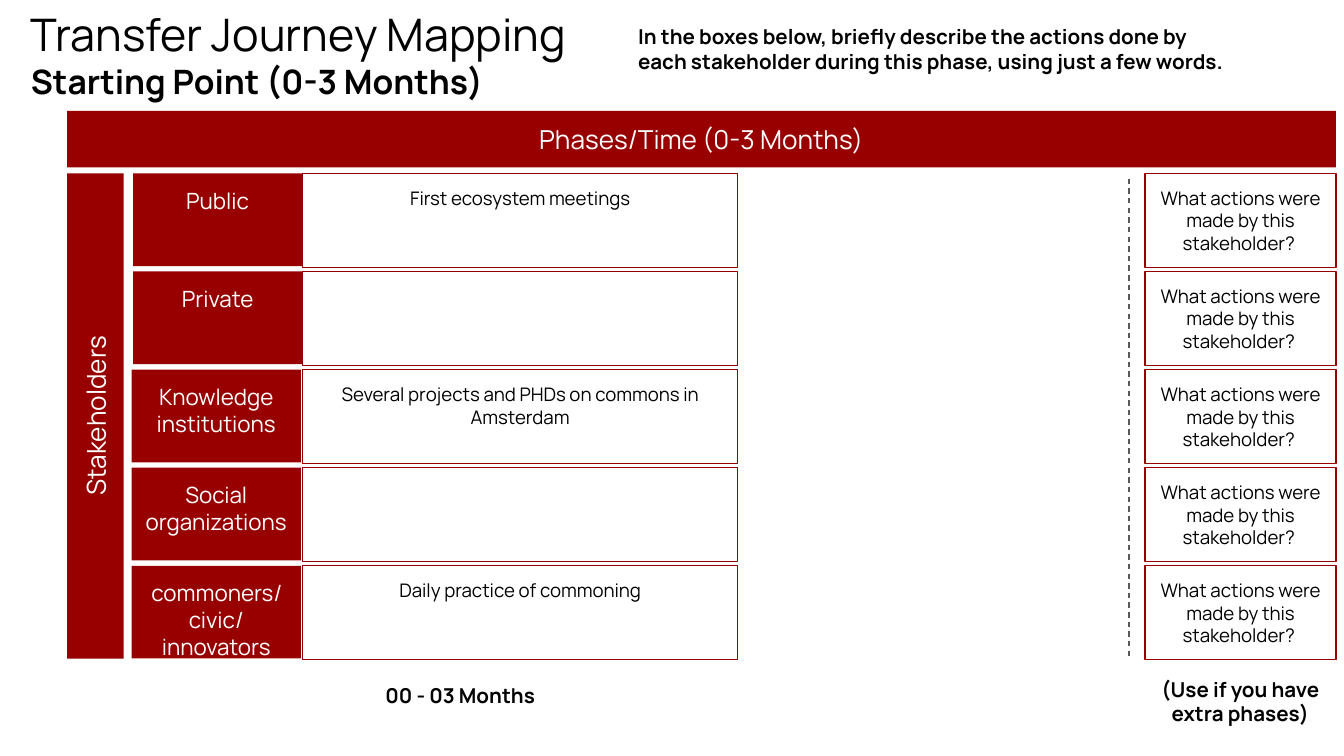
import pptx
import pptx.util
import pptx.dml.color
import pptx.enum.dml
import pptx.enum.shapes
import pptx.enum.text
import pptx.oxml.ns
import lxml.etree

RED, BLACK, WHITE, GREY = "980000", "000000", "FFFFFF", "595959"
FONT = "Manrope"
STEP = 146  # distance from one row to the next
ROWS = [
    (["Public"], "First ecosystem meetings"),
    (["Private"], ""),
    (["Knowledge institutions"],
     "Several projects and PHDs on commons in Amsterdam"),
    (["Social organizations"], ""),
    (["commoners/civic/", "innovators"], "Daily practice of commoning"),
]
ASK = "What actions were made by this stakeholder? "
ALIGN = pptx.enum.text.PP_ALIGN
ANCHOR = pptx.enum.text.MSO_ANCHOR


def px(n):
    """200 px to the inch."""
    return pptx.util.Emu(n * 4572)


def color(code):
    return pptx.dml.color.RGBColor.from_string(code)


def write(shape, lines, tone=BLACK, align=ALIGN.CENTER, anchor=ANCHOR.TOP):
    """Each line is (text, size, bold)."""
    frame = shape.text_frame
    frame.word_wrap = True
    frame.auto_size = pptx.enum.text.MSO_AUTO_SIZE.NONE
    frame.vertical_anchor = anchor
    frame.margin_left = frame.margin_right = px(20)
    frame.margin_top = frame.margin_bottom = px(20)
    for i, (text, size, bold) in enumerate(lines):
        para = frame.add_paragraph() if i else frame.paragraphs[0]
        para.alignment = align
        run = para.add_run()
        run.text = text
        font = run.font
        font.name, font.size, font.bold = FONT, pptx.util.Pt(size), bold
        font.color.rgb = color(tone)


def rect(slide, box, fill=None):
    """Solid red block, or a hollow one with a red outline."""
    shape = slide.shapes.add_shape(
        pptx.enum.shapes.MSO_SHAPE.RECTANGLE, *map(px, box))
    shape.shadow.inherit = False
    if fill:
        shape.fill.solid()
        shape.fill.fore_color.rgb = color(fill)
        shape.line.fill.background()
    else:
        shape.fill.background()
        shape.line.color.rgb = color(RED)
        shape.line.width = pptx.util.Pt(0.75)
    return shape


def note(slide, box, text, align=ALIGN.CENTER):
    shape = slide.shapes.add_textbox(*map(px, box))
    write(shape, [(text, 11, True)], align=align)


def head(slide, box):
    title = slide.shapes.title
    title.left, title.top, title.width, title.height = map(px, box)
    write(title, [("Transfer Journey Mapping", 24, False),
                  ("Starting Point (0-3 Months)", 18, True)],
          align=ALIGN.LEFT)


def bars(slide, box):
    """Time bar along the top, stakeholder bar down the left side."""
    x, y, w, h = box
    thick = 84
    top = rect(slide, (x, y, w, thick), RED)
    write(top, [("Phases/Time (0-3 Months)", 14, False)], WHITE,
          anchor=ANCHOR.MIDDLE)
    # The side bar is laid flat around its centre, then turned
    span = h - thick - 9
    mid = y + h - span // 2
    side = rect(slide, (x + thick // 2 - span // 2, mid - thick // 2,
                        span, thick), RED)
    side.rotation = 270
    write(side, [("Stakeholders", 14, False)], WHITE, anchor=ANCHOR.MIDDLE)


def grid(slide, box):
    """Label, action and extra-phase cell for each stakeholder."""
    x, y, w, h = box
    for i, (names, act) in enumerate(ROWS):
        top = y + i * STEP
        left = x + 2 if i < 2 else x
        label = rect(slide, (left, top, 252, h - 2), RED)
        write(label, [(name, 12, False) for name in names], WHITE)
        cell = rect(slide, (x + 254, top, 648, h))
        if act:
            write(cell, [(act, 10, False)])
        extra = rect(slide, (x + w - 284, top, 284, h))
        write(extra, [(ASK, 10, False)])


def split(slide, x, top, end):
    """Dashed rule before the extra phase."""
    line = slide.shapes.add_connector(
        pptx.enum.shapes.MSO_CONNECTOR.STRAIGHT,
        px(x), px(top), px(x), px(end))
    line.line.color.rgb = color(GREY)
    line.line.width = pptx.util.Pt(0.75)
    line.line.dash_style = pptx.enum.dml.MSO_LINE.DASH
    props = line._element.spPr
    lxml.etree.SubElement(props, pptx.oxml.ns.qn("a:effectLst"))


def main():
    deck = pptx.Presentation()
    deck.slide_width, deck.slide_height = px(2000), px(1125)
    slide = deck.slides.add_slide(deck.slide_layouts[5])

    # Heading and instructions
    head(slide, (26, -10, 1776, 150))
    note(slide, (930, 16, 932, 150),
         "In the boxes below, briefly describe the actions done by "
         "each stakeholder during this phase, using just a few words.",
         ALIGN.LEFT)

    # Journey map
    bars(slide, (100, 165, 1888, 815))
    grid(slide, (196, 258, 1792, 140))
    split(slide, 1680, 266, 978)

    # Phase captions
    note(slide, (494, 996, 382, 84), "00 - 03 Months")
    note(slide, (1679, 987, 334, 84), "(Use if you have extra phases)")

    deck.save("out.pptx")


if __name__ == "__main__":
    main()
